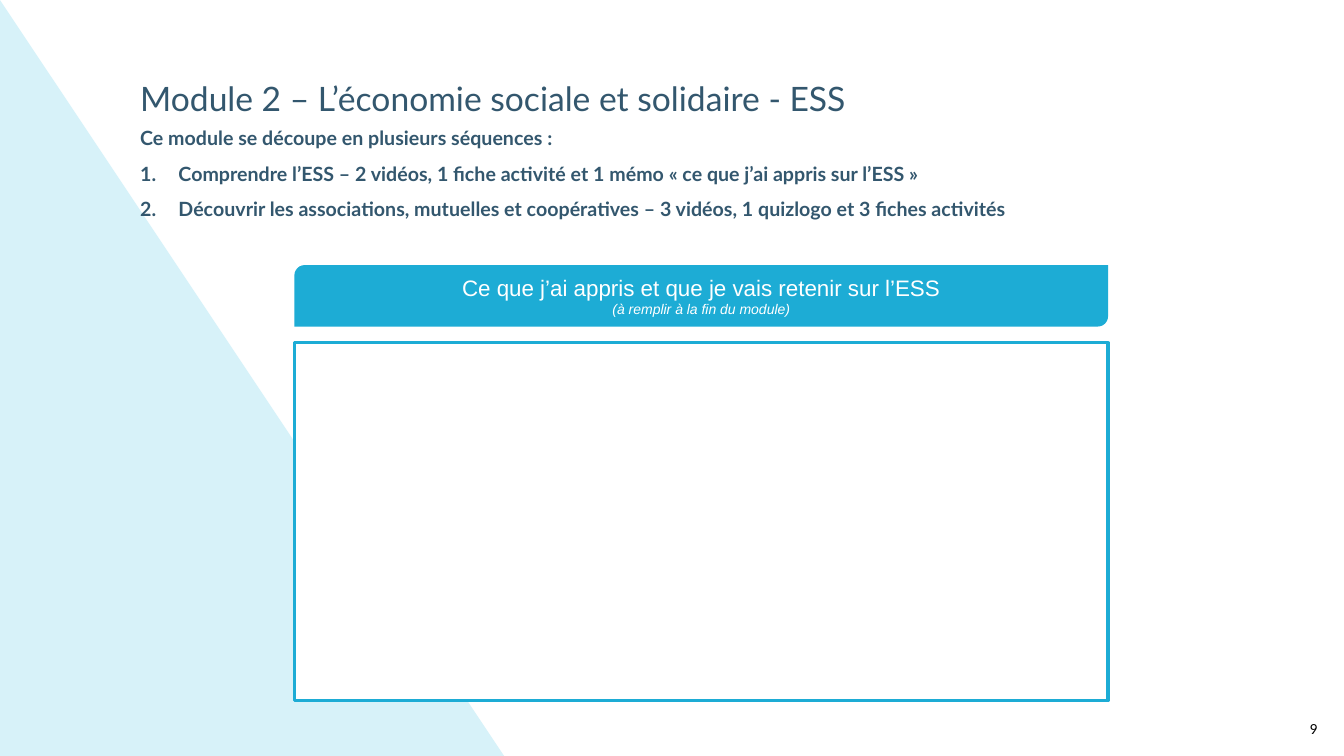
from lxml.etree import SubElement
from pptx import Presentation
from pptx.dml.color import RGBColor
from pptx.enum.shapes import MSO_SHAPE
from pptx.enum.text import MSO_ANCHOR, MSO_AUTO_SIZE, PP_ALIGN
from pptx.oxml.ns import qn
from pptx.util import Emu, Pt

PX = 9144  # 100 px to the inch
COLORS = {
    "pale": "D7F2F9",
    "cyan": "1DACD5",
    "slate": "33576E",
    "white": "FFFFFF",
    "black": "000000",
}
TITLE = "Module 2 – L’économie sociale et solidaire - ESS"
INTRO = "Ce module se découpe en plusieurs séquences :"
SEQUENCES = [
    "Comprendre l’ESS – 2 vidéos, 1 fiche activité et 1 mémo « ce que j’ai appris sur l’ESS »",
    "Découvrir les associations, mutuelles et coopératives – 3 vidéos, 1 quizlogo et 3 fiches activités",
]


def color(name):
    return RGBColor.from_string(COLORS[name])


def emu(*lengths):
    return [Emu(length * PX) for length in lengths]


def place(shape, box):
    shape.left, shape.top, shape.width, shape.height = emu(*box)


def add_block(page, kind, box, fill, line=None):
    shape = page.shapes.add_shape(kind, *emu(*box))
    shape.shadow.inherit = False
    shape.fill.solid()
    shape.fill.fore_color.rgb = color(fill)
    if line:
        shape.line.color.rgb = color(line)
        shape.line.width = Pt(2.25)
    else:
        shape.line.fill.background()
    return shape


def prepare_frame(shape, anchor=MSO_ANCHOR.TOP):
    frame = shape.text_frame
    frame.word_wrap = True
    frame.auto_size = MSO_AUTO_SIZE.NONE
    frame.vertical_anchor = anchor
    return frame


def write(frame, text, size, ink, font="Lato", bold=False, italic=False,
          align=PP_ALIGN.LEFT, line_spacing=1.0, before=0, number_indent=None):
    first = frame.paragraphs[0]
    para = first if not first.runs else frame.add_paragraph()
    properties = para._p.get_or_add_pPr()
    indent = (number_indent or 0) * PX
    properties.set("marL", str(indent))
    properties.set("indent", str(-indent))
    if number_indent:
        SubElement(properties, qn("a:buFont"), typeface="+mj-lt")
        SubElement(properties, qn("a:buAutoNum"), type="arabicPeriod")
    else:
        SubElement(properties, qn("a:buNone"))
    para.alignment = align
    para.line_spacing = line_spacing
    para.space_before = Pt(before)
    span = para.add_run()
    span.text = text
    span.font.name = font
    span.font.size = Pt(size)
    span.font.bold = bold
    span.font.italic = italic
    span.font.color.rgb = color(ink)


# Pale triangle behind everything else
def draw_backdrop(page, box):
    triangle = add_block(page, MSO_SHAPE.ISOSCELES_TRIANGLE, box, "pale")
    triangle.adjustments[0] = 0
    triangle._element.getparent().insert(2, triangle._element)


# Module title with its numbered sequences
def draw_heading(page, box):
    left, top, width, height = box
    title, body = page.shapes.title, page.placeholders[1]
    place(title, (left, top, 918, 77))
    write(prepare_frame(title), TITLE, 24, "slate", line_spacing=0.9)

    place(body, (left, top + 46, width, height - 46))
    frame = prepare_frame(body)
    style = dict(size=14, ink="slate", bold=True, line_spacing=0.9)
    write(frame, INTRO, **style)
    for sequence in SEQUENCES:
        write(frame, sequence, before=10, number_indent=38, **style)


# Banner above an empty frame to fill in
def draw_memo(page, box):
    left, top, width, height = box
    banner_height, gap = 61, 16
    banner = add_block(page, MSO_SHAPE.ROUND_2_DIAG_RECTANGLE,
                       (left, top, width, banner_height), "cyan")
    frame = prepare_frame(banner, MSO_ANCHOR.MIDDLE)
    style = dict(ink="white", font="Arial", align=PP_ALIGN.CENTER)
    write(frame, "Ce que j’ai appris et que je vais retenir sur l’ESS", 16, **style)
    write(frame, "(à remplir à la fin du module)", 10, italic=True, **style)

    offset = banner_height + gap
    add_block(page, MSO_SHAPE.RECTANGLE,
              (left, top + offset, width, height - offset), "white", line="cyan")


# Page number in the corner
def draw_page_number(page, box):
    number = page.shapes.add_textbox(*emu(*box))
    write(prepare_frame(number), "9", 11, "black", font="Calibri")


def main():
    deck = Presentation()
    deck.slide_width, deck.slide_height = emu(1333, 750)
    page = deck.slides.add_slide(deck.slide_layouts[1])
    draw_backdrop(page, (0, 0, 500, 750))
    draw_heading(page, (129, 77, 1168, 162))
    draw_memo(page, (292, 263, 807, 432))
    draw_page_number(page, (1289, 708, 39, 29))
    deck.save("out.pptx")


if __name__ == "__main__":
    main()
